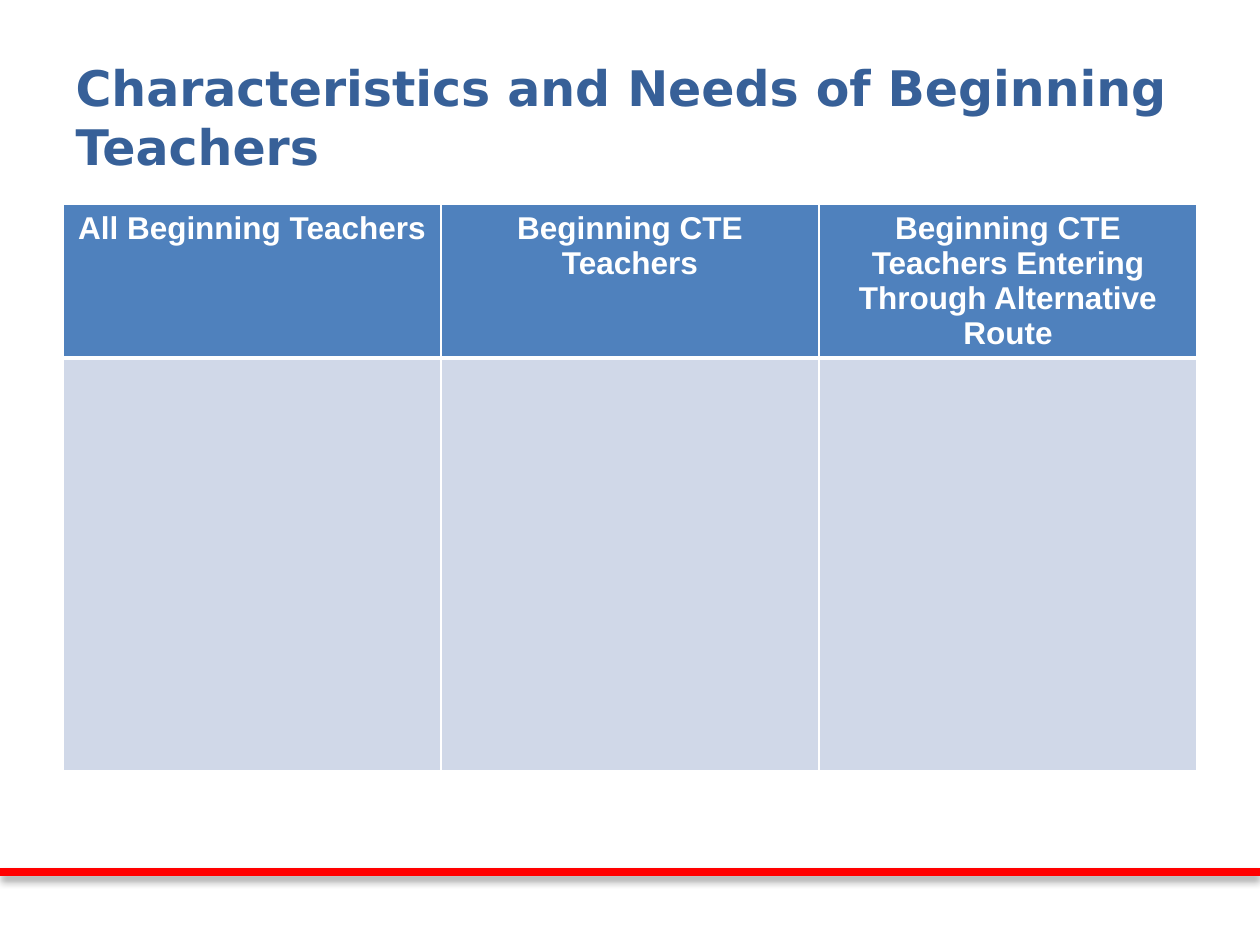
from pptx import Presentation
from pptx.dml.color import RGBColor
from pptx.enum.shapes import MSO_CONNECTOR
from pptx.enum.text import MSO_ANCHOR, MSO_AUTO_SIZE, PP_ALIGN
from pptx.oxml import parse_xml
from pptx.oxml.ns import nsdecls
from pptx.util import Inches, Pt

WHITE, RED, NAVY, BLUE, PALE = "FFFFFF", "FF0000", "376098", "4F81BD", "D0D8E8"
HEADINGS = [
    "All Beginning Teachers",
    "Beginning CTE Teachers",
    "Beginning CTE Teachers Entering Through Alternative Route",
]
ROW_HEIGHTS = [1.22, 3.28]


def color(value):
    return RGBColor.from_string(value)


def style_font(para, name, size, value):
    para.font.name = name
    para.font.size = Pt(size)
    para.font.bold = True
    para.font.color.rgb = color(value)


def add_rule(page, left, top, width):
    """Draw the thick red footer line with a soft shadow below it."""
    rule = page.shapes.add_connector(
        MSO_CONNECTOR.STRAIGHT, left, top, left + width, top)
    rule.line.color.rgb = color(RED)
    rule.line.width = Pt(5)
    rule.element.spPr.append(parse_xml(
        f'<a:effectLst {nsdecls("a")}>'
        f'<a:outerShdw blurRad="{Pt(4)}" dist="{Pt(3)}" dir="5400000" rotWithShape="0">'
        '<a:srgbClr val="000000"><a:alpha val="35000"/></a:srgbClr>'
        '</a:outerShdw></a:effectLst>'))


def set_title(page, left, top, width, height, text):
    title = page.shapes.title
    title.left, title.top, title.width, title.height = left, top, width, height
    frame = title.text_frame
    frame.text = text
    frame.word_wrap = True
    frame.auto_size = MSO_AUTO_SIZE.NONE
    frame.vertical_anchor = MSO_ANCHOR.MIDDLE
    para = frame.paragraphs[0]
    para.alignment = PP_ALIGN.LEFT
    style_font(para, "DejaVu Sans", 28, NAVY)


def set_borders(cell, top, bottom):
    """Give a cell white borders, with the top and bottom widths in points."""
    properties = cell._tc.get_or_add_tcPr()
    for side, width in zip("LRTB", (1, 1, top, bottom)):
        properties.append(parse_xml(
            f'<a:ln{side} {nsdecls("a")} w="{Pt(width)}"><a:solidFill>'
            f'<a:srgbClr val="{WHITE}"/></a:solidFill></a:ln{side}>'))


def add_comparison(page, left, top, width):
    """Add the table: one heading row above one empty row to fill in."""
    height = Inches(sum(ROW_HEIGHTS))
    table = page.shapes.add_table(
        len(ROW_HEIGHTS), len(HEADINGS), left, top, width, height).table
    for row, row_height in zip(table.rows, ROW_HEIGHTS):
        row.height = Inches(row_height)
    for column, heading in enumerate(HEADINGS):
        head, body = table.cell(0, column), table.cell(1, column)
        head.text = heading
        para = head.text_frame.paragraphs[0]
        para.alignment = PP_ALIGN.CENTER
        style_font(para, "Arial", 18, WHITE)
        for cell, fill, borders in ((head, BLUE, (1, 3)), (body, PALE, (3, 1))):
            set_borders(cell, *borders)
            cell.fill.solid()
            cell.fill.fore_color.rgb = color(fill)


def main():
    deck = Presentation()
    deck.slide_width, deck.slide_height = Inches(10), Inches(7.5)
    page = deck.slides.add_slide(deck.slide_layouts[5])
    margin = Inches(0.5)
    content_width = deck.slide_width - 2 * margin
    add_rule(page, 0, Inches(6.92), deck.slide_width)
    set_title(page, margin, Inches(0.3), content_width, Inches(1.25),
              "Characteristics and Needs of Beginning Teachers")
    add_comparison(page, margin, Inches(1.62), content_width)
    deck.save("out.pptx")


if __name__ == "__main__":
    main()
